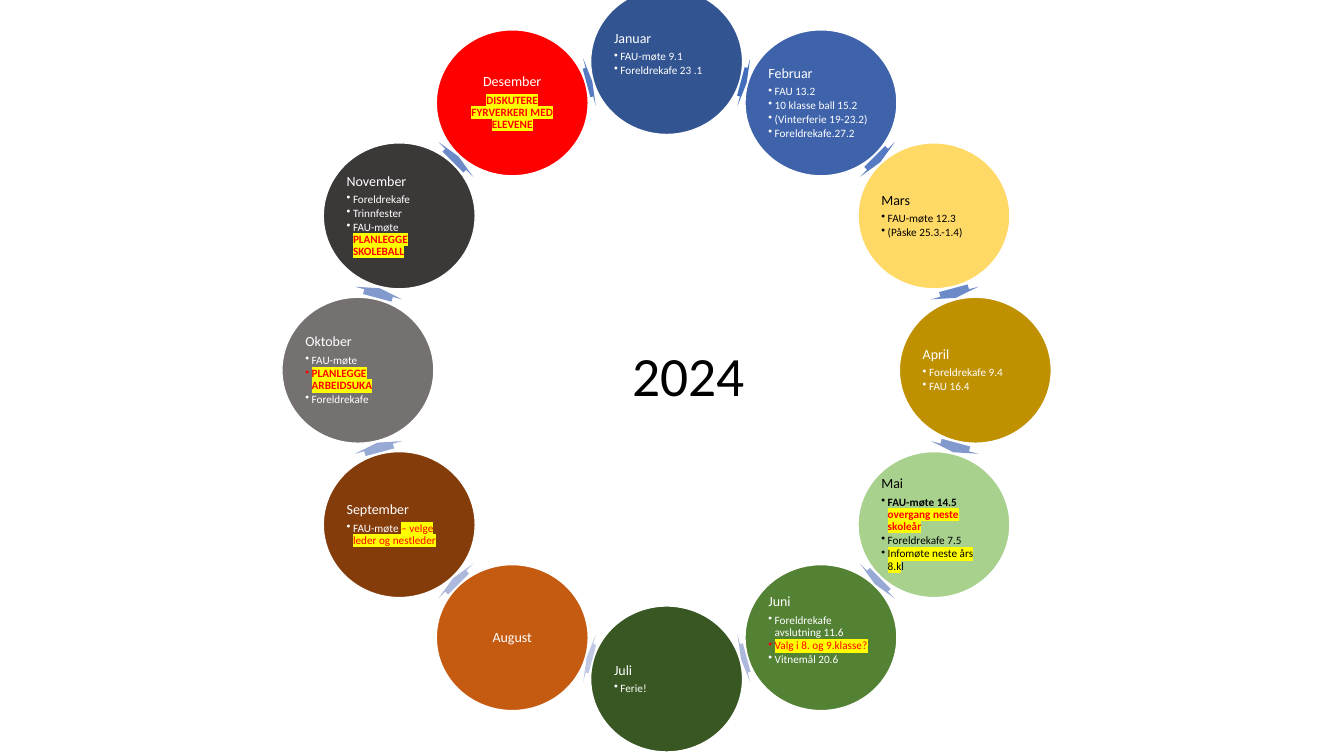
from math import cos, radians, sin

from lxml.etree import SubElement
from pptx import Presentation
from pptx.dml.color import RGBColor
from pptx.enum.shapes import MSO_SHAPE
from pptx.enum.text import MSO_ANCHOR, PP_ALIGN
from pptx.oxml import parse_xml
from pptx.oxml.ns import nsdecls, qn
from pptx.util import Cm, Pt

WHITE, BLACK, RED, YELLOW = "FFFFFF", "000000", "FF0000", "FFFF00"
PLAIN = {}
BOLD = {"bold": True}
MARKED = {"highlight": YELLOW}
RED_MARKED = {"color": RED, "highlight": YELLOW}
ALERT = {"color": RED, "highlight": YELLOW, "bold": True}

# Month, circle colour, text colour, items; an item is a list of (text, style) runs
MONTHS = [
    ("Januar", "325491", WHITE, [[("FAU-møte 9.1", PLAIN)], [("Foreldrekafe 23 .1", PLAIN)]]),
    ("Februar", "3E63AA", WHITE, [
        [("FAU 13.2", PLAIN)], [("10 klasse ball 15.2", PLAIN)],
        [("(Vinterferie 19-23.2)", PLAIN)], [("Foreldrekafe.27.2", PLAIN)]]),
    ("Mars", "FFD966", BLACK, [[("FAU-møte 12.3", PLAIN)], [("(Påske 25.3.-1.4)", PLAIN)]]),
    ("April", "BF9000", WHITE, [[("Foreldrekafe 9.4", PLAIN)], [("FAU 16.4", PLAIN)]]),
    ("Mai", "A9D18E", BLACK, [
        [("FAU-møte 14.5 ", BOLD), ("overgang neste skoleår", ALERT)],
        [("Foreldrekafe 7.5", PLAIN)],
        [("Infomøte neste års 8.k", MARKED), ("l", PLAIN)]]),
    ("Juni", "548235", WHITE, [
        [("Foreldrekafe avslutning 11.6", PLAIN)],
        [("Valg i 8. og 9.klasse?", RED_MARKED)],
        [("Vitnemål 20.6", PLAIN)]]),
    ("Juli", "385723", WHITE, [[("Ferie!", PLAIN)]]),
    ("August", "C55A11", WHITE, []),
    ("September", "843C0B", WHITE, [
        [("FAU-møte ", PLAIN), ("– velge leder og nestleder", RED_MARKED)]]),
    ("Oktober", "767171", WHITE, [
        [("FAU-møte", PLAIN)], [("PLANLEGGE ARBEIDSUKA", ALERT)], [("Foreldrekafe", PLAIN)]]),
    ("November", "3B3838", WHITE, [
        [("Foreldrekafe", PLAIN)], [("Trinnfester", PLAIN)],
        [("FAU-møte ", PLAIN), ("PLANLEGGE SKOLEBALL", ALERT)]]),
    ("Desember", RED, WHITE, [[("DISKUTERE FYRVERKERI MED ELEVENE", ALERT)]]),
]
CENTERED = {"August", "Desember"}
RAISED = {"Januar", "Juni"}  # text sits a little above the middle
ARROW_SHADES = ["416DBB", "567BC2", "6C8AC8", "8299CE", "97A9D5", "ACB9DD", "C1C9E4"]
ARROW_LENGTHS = [0.15, 0.2, 0.25, 0.25, 0.2, 0.15]

FONT = "Calibri"
CENTER_X, CENTER_Y, RADIUS = 16.8, 9.33, 7.78
CIRCLE_WIDTH, CIRCLE_HEIGHT = 3.83, 3.68
ARROW_HEIGHT = 1.24
INSET, RAISED_INSET = 0.03, 0.4
STEP = 360 / len(MONTHS)


def rgb(value):
    return RGBColor.from_string(value)


def add_on_ring(slide, kind, angle, radius, width, height, color):
    """Add a filled shape centred on the ring, the angle counted clockwise from the top."""
    x = CENTER_X + radius * sin(radians(angle))
    y = CENTER_Y - radius * cos(radians(angle))
    shape = slide.shapes.add_shape(
        kind, Cm(x - width / 2), Cm(y - height / 2), Cm(width), Cm(height))
    shape.shadow.inherit = False
    shape.fill.solid()
    shape.fill.fore_color.rgb = rgb(color)
    return shape


def add_run(paragraph, text, size, color, style):
    run = paragraph.add_run()
    run.text = text
    values = {"name": FONT, "size": Pt(size), "bold": style.get("bold", False)}
    for name, value in values.items():
        setattr(run.font, name, value)
    run.font.color.rgb = rgb(style.get("color", color))
    if "highlight" in style:
        fill = run.font._element.find(qn("a:solidFill"))
        fill.addnext(parse_xml(
            f'<a:highlight {nsdecls("a")}><a:srgbClr val="{style["highlight"]}"/></a:highlight>'))


def add_bullet(paragraph):
    paragraph.level = 1
    properties = paragraph._p.get_or_add_pPr()
    properties.set("marL", str(Cm(0.16)))
    properties.set("indent", str(-Cm(0.16)))
    SubElement(properties, qn("a:buChar"), char="•")


def write_month(shape, month, color, items):
    frame = shape.text_frame
    frame_format = {
        "word_wrap": True, "vertical_anchor": MSO_ANCHOR.MIDDLE,
        "margin_left": Cm(INSET), "margin_right": Cm(INSET), "margin_top": Cm(INSET),
        "margin_bottom": Cm(RAISED_INSET if month in RAISED else INSET),
    }
    for name, value in frame_format.items():
        setattr(frame, name, value)
    centered = month in CENTERED
    for index, runs in enumerate([[(month, PLAIN)]] + items):
        is_item = index > 0
        paragraph = frame.add_paragraph() if is_item else frame.paragraphs[0]
        if is_item and not centered:
            add_bullet(paragraph)
        paragraph_format = {
            "alignment": PP_ALIGN.CENTER if centered else PP_ALIGN.LEFT,
            "line_spacing": 0.9,
            "space_after": Pt(1.2 if is_item else 3.5),
        }
        for name, value in paragraph_format.items():
            setattr(paragraph, name, value)
        for text, style in runs:
            add_run(paragraph, text, 8 if is_item else 10, color, style)


def add_year(slide, year):
    title = slide.shapes.title
    position = {"left": 13.94, "top": 8.97, "width": 6.83, "height": 1.12}
    for name, value in position.items():
        setattr(title, name, Cm(value))
    title.text_frame.vertical_anchor = MSO_ANCHOR.MIDDLE
    paragraph = title.text_frame.paragraphs[0]
    paragraph.alignment = PP_ALIGN.CENTER
    paragraph.line_spacing = 0.9
    add_run(paragraph, year, 39.6, BLACK, PLAIN)


def main():
    presentation = Presentation()
    presentation.slide_width, presentation.slide_height = Cm(33.87), Cm(19.05)
    slide = presentation.slides.add_slide(presentation.slide_layouts[5])
    add_year(slide, "2024")
    arrow_radius = RADIUS * cos(radians(STEP / 2))
    for index, (month, fill, color, items) in enumerate(MONTHS):
        circle = add_on_ring(slide, MSO_SHAPE.OVAL, index * STEP, RADIUS,
                             CIRCLE_WIDTH, CIRCLE_HEIGHT, fill)
        circle.line.color.rgb = rgb(WHITE)
        circle.line.width = Pt(1)
        write_month(circle, month, color, items)

        angle = (index + 0.5) * STEP
        shade = ARROW_SHADES[min(index, len(MONTHS) - index)]
        arrow = add_on_ring(slide, MSO_SHAPE.RIGHT_ARROW, angle, arrow_radius,
                            ARROW_LENGTHS[index % len(ARROW_LENGTHS)], ARROW_HEIGHT, shade)
        arrow.rotation = angle
        arrow.adjustments[0] = 0.6
        arrow.line.fill.background()
    presentation.save("out.pptx")


if __name__ == "__main__":
    main()
